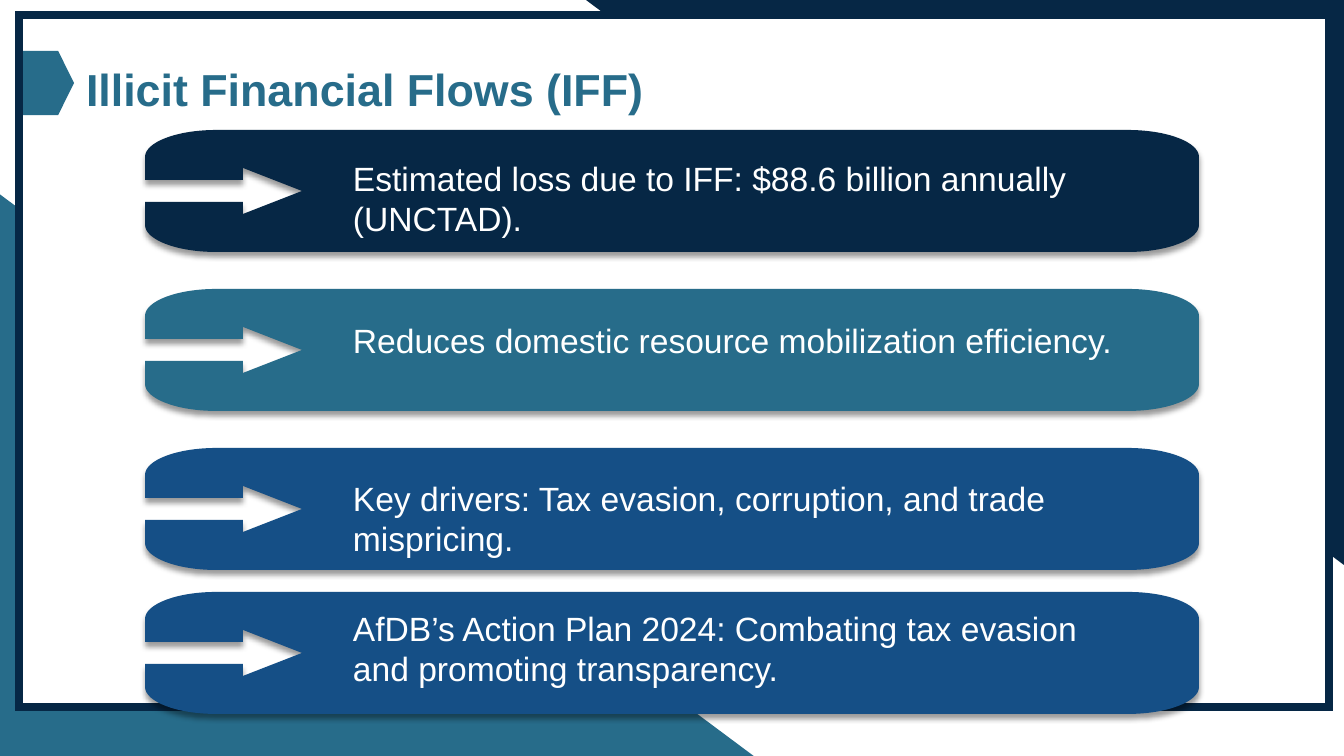
from dataclasses import dataclass

from lxml import etree
from pptx import Presentation
from pptx.dml.color import RGBColor
from pptx.enum.shapes import MSO_SHAPE
from pptx.enum.text import MSO_ANCHOR, MSO_AUTO_SIZE, PP_ALIGN
from pptx.oxml.ns import qn
from pptx.util import Pt

TRIANGLE = MSO_SHAPE.RIGHT_TRIANGLE
FRAME = MSO_SHAPE.ROUNDED_RECTANGLE
PENTAGON = MSO_SHAPE.PENTAGON
TOP = MSO_ANCHOR.TOP
LEFT = PP_ALIGN.LEFT
GROW = MSO_AUTO_SIZE.SHAPE_TO_FIT_TEXT


@dataclass(frozen=True)
class Theme:
    navy: str = "062745"
    teal: str = "276C8A"
    blue: str = "154F86"
    white: str = "FFFFFF"
    shadow: str = "000000"
    font: str = "Arial"
    title_size: int = 32
    caption_size: int = 24
    frame_line: int = 6
    shadow_blur: int = 4
    shadow_distance: int = 3


THEME = Theme()
TITLE = "Illicit Financial Flows (IFF)"
BANNERS = [
    {"text": "Estimated loss due to IFF: $88.6 billion annually (UNCTAD).",
     "color": THEME.navy, "top": 130, "caption": (153, 92)},
    {"text": "Reduces domestic resource mobilization efficiency.",
     "color": THEME.teal, "top": 289, "caption": (315, 50)},
    {"text": "Key drivers: Tax evasion, corruption, and trade mispricing.",
     "color": THEME.blue, "top": 448, "caption": (473, 92)},
    {"text": "AfDB’s Action Plan 2024: Combating tax evasion and promoting transparency.",
     "color": THEME.blue, "top": 592, "caption": (603, 92)},
]

SLIDE_W, SLIDE_H = 1344, 756
BANNER_LEFT, BANNER_W, BANNER_H = 145, 1054, 122
CORNER_W, CORNER_H = 71, 27
CORNER_PULL = 0.55
SHAFT_LENGTH, ARROW_LENGTH = 98, 157
SHAFT_HALF, HEAD_HALF = 11, 23
CAPTION_LEFT, CAPTION_W = 343, 795
EMU_PER_PX = 914400 / 100.8


def px(length):
    return round(length * EMU_PER_PX)


def paint(shape, color):
    shape.shadow.inherit = False
    shape.fill.solid()
    shape.fill.fore_color.rgb = RGBColor.from_string(color)
    shape.line.fill.background()


def add_panel(slide, preset, box, color):
    panel = slide.shapes.add_shape(preset, *map(px, box))
    paint(panel, color)
    return panel


def write(shape, text, size, color, bold=False):
    frame = shape.text_frame
    frame.text = text
    frame.word_wrap = True
    frame.auto_size = GROW
    frame.vertical_anchor = TOP
    paragraph = frame.paragraphs[0]
    paragraph.alignment = LEFT
    font = paragraph.runs[0].font
    font.name, font.size, font.bold = THEME.font, Pt(size), bold
    font.color.rgb = RGBColor.from_string(color)


def banner_outline(top):
    right, bottom = BANNER_LEFT + BANNER_W, top + BANNER_H
    middle = top + BANNER_H / 2
    shaft_end = BANNER_LEFT + SHAFT_LENGTH
    inner_left, inner_right = BANNER_LEFT + CORNER_W, right - CORNER_W
    inner_top, inner_bottom = top + CORNER_H, bottom - CORNER_H
    return [
        (inner_left, top),
        (inner_right, top),
        (right, inner_top),
        (right, inner_bottom),
        (inner_right, bottom),
        (inner_left, bottom),
        (BANNER_LEFT, inner_bottom),
        (BANNER_LEFT, middle + SHAFT_HALF),
        (shaft_end, middle + SHAFT_HALF),
        (shaft_end, middle + HEAD_HALF),
        (BANNER_LEFT + ARROW_LENGTH, middle),
        (shaft_end, middle - HEAD_HALF),
        (shaft_end, middle - SHAFT_HALF),
        (BANNER_LEFT, middle - SHAFT_HALF),
        (BANNER_LEFT, inner_top),
        (inner_left, top),
    ]


def round_corners(plate):
    edges = list(plate.element.iter(qn("a:lnTo")))
    points = [(int(edge[0].get("x")), int(edge[0].get("y"))) for edge in edges]
    for index, (edge, start, end) in enumerate(zip(edges[1:], points, points[1:])):
        (x1, y1), (x2, y2) = start, end
        is_corner = (abs(x2 - x1), abs(y2 - y1)) == (px(CORNER_W), px(CORNER_H))
        if not (is_corner or index in (0, 2, 4, len(edges) - 2)):
            continue
        dx, dy = round((x2 - x1) * CORNER_PULL), round((y2 - y1) * CORNER_PULL)
        if index in (0, 4):
            controls = [(x1 + dx, y1), (x2, y2 - dy)]
        else:
            controls = [(x1, y1 + dy), (x2 - dx, y2)]
        edge.tag = qn("a:cubicBezTo")
        for position, (x, y) in enumerate(controls):
            control = etree.Element(qn("a:pt"), x=str(x), y=str(y))
            edge.insert(position, control)


def add_shadow(shape):
    effects = shape.element.spPr.find(qn("a:effectLst"))
    shadow = etree.SubElement(
        effects, qn("a:outerShdw"), blurRad=str(Pt(THEME.shadow_blur)),
        dist=str(Pt(THEME.shadow_distance)), dir="5400000", algn="t", rotWithShape="0")
    tint = etree.SubElement(shadow, qn("a:srgbClr"), val=THEME.shadow)
    etree.SubElement(tint, qn("a:alpha"), val="40000")


def add_banner(slide, banner):
    start, *rest = [(px(x), px(y)) for x, y in banner_outline(banner["top"])]
    builder = slide.shapes.build_freeform(*start)
    builder.add_line_segments(rest, close=True)
    plate = builder.convert_to_shape()
    round_corners(plate)
    paint(plate, banner["color"])
    add_shadow(plate)
    top, height = banner["caption"]
    caption = slide.shapes.add_textbox(px(CAPTION_LEFT), px(top), px(CAPTION_W), px(height))
    write(caption, banner["text"], THEME.caption_size, THEME.white)


def add_backdrop(slide):
    upper_corner = add_panel(slide, TRIANGLE, (586, 0, 758, 565), THEME.navy)
    upper_corner.rotation = 180
    add_panel(slide, TRIANGLE, (-2, 193, 757, 564), THEME.teal)
    border = add_panel(slide, FRAME, (19, 15, 1310, 692), THEME.white)
    border.adjustments[0] = 0
    border.line.color.rgb = RGBColor.from_string(THEME.navy)
    border.line.width = Pt(THEME.frame_line)
    outline = border.element.spPr.find(qn("a:ln"))
    etree.SubElement(outline, qn("a:miter"), lim="800000")
    marker = add_panel(slide, PENTAGON, (23, 51, 51, 64), THEME.teal)
    marker.adjustments[0] = 0.31


def add_title(slide):
    title = slide.shapes.title
    title.left, title.top, title.width, title.height = map(px, (76, 57, 1198, 65))
    write(title, TITLE, THEME.title_size, THEME.teal, bold=True)
    slide.shapes.element.append(title.element)


def main():
    deck = Presentation()
    deck.slide_width, deck.slide_height = px(SLIDE_W), px(SLIDE_H)
    slide = deck.slides.add_slide(deck.slide_layouts[5])
    add_backdrop(slide)
    add_title(slide)
    for banner in BANNERS:
        add_banner(slide, banner)
    deck.save("out.pptx")


if __name__ == "__main__":
    main()
